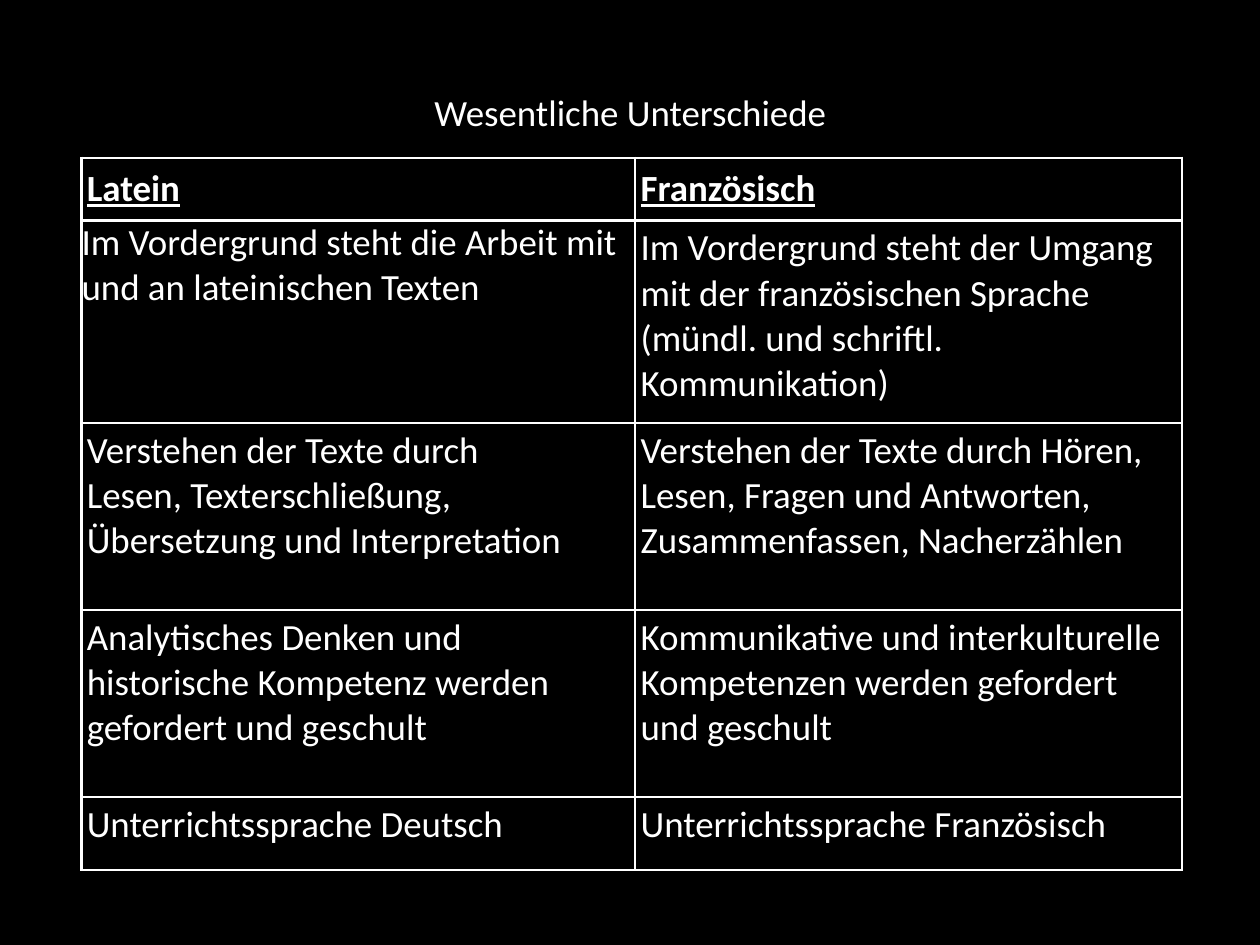
from dataclasses import dataclass

from lxml import etree
from pptx import Presentation
from pptx import util as u
from pptx.dml.color import RGBColor
from pptx.enum import text
from pptx.oxml import ns

PX = 9144  # EMU per px, 100 px to the inch


@dataclass(frozen=True)
class Theme:
    font: str = "Calibri"
    size: int = 30
    ground: str = "000000"
    ink: str = "FFFFFF"
    border: int = 2


@dataclass(frozen=True)
class Entry:
    lines: tuple[str, ...]
    heading: bool = False
    inset: int = 6


THEME = Theme()
COLUMNS = (625, 617)
ROW_HEIGHTS = (71, 229, 211, 211, 82)
ROWS = (
    (Entry(("Latein",), heading=True), Entry(("Französisch",), heading=True)),
    (
        Entry(("Im Vordergrund steht die Arbeit mit und an lateinischen Texten",), inset=0),
        Entry(("Im Vordergrund steht der Umgang mit der französischen Sprache "
               "(mündl. und schriftl. Kommunikation)",)),
    ),
    (
        Entry(("Verstehen der Texte durch", "Lesen, Texterschließung,",
               "Übersetzung und Interpretation")),
        Entry(("Verstehen der Texte durch Hören, Lesen, Fragen und Antworten, "
               "Zusammenfassen, Nacherzählen",)),
    ),
    (
        Entry(("Analytisches Denken und historische Kompetenz werden "
               "gefordert und geschult",)),
        Entry(("Kommunikative und interkulturelle Kompetenzen werden "
               "gefordert und geschult",)),
    ),
    (Entry(("Unterrichtssprache Deutsch",)), Entry(("Unterrichtssprache Französisch",))),
)


def px(length: int) -> u.Emu:
    return u.Emu(length * PX)


def write(frame, lines: tuple[str, ...], *, bold: bool = False, underline: bool = False,
          align=text.PP_ALIGN.LEFT) -> None:
    """Fill a text frame with one paragraph per line."""
    for index, line in enumerate(lines):
        para = frame.add_paragraph() if index else frame.paragraphs[0]
        para.alignment = align
        span = para.add_run()
        span.text = line
        span.font.name = THEME.font
        span.font.size = u.Pt(THEME.size)
        span.font.color.rgb = RGBColor.from_string(THEME.ink)
        span.font.bold = bold
        span.font.underline = underline


def set_insets(target, inset: int) -> None:
    target.margin_left = target.margin_right = px(inset)
    target.margin_top = target.margin_bottom = px(inset)


def add_borders(cell) -> None:
    properties = cell._tc.get_or_add_tcPr()
    for side in ("a:lnL", "a:lnR", "a:lnT", "a:lnB"):
        line = etree.SubElement(properties, ns.qn(side), w=str(u.Pt(THEME.border)))
        fill = etree.SubElement(line, ns.qn("a:solidFill"))
        etree.SubElement(fill, ns.qn("a:srgbClr"), val=THEME.ink)


def fill_cell(cell, entry: Entry) -> None:
    add_borders(cell)
    cell.fill.background()
    set_insets(cell, entry.inset)
    cell.vertical_anchor = text.MSO_ANCHOR.MIDDLE if entry.heading else text.MSO_ANCHOR.TOP
    write(cell.text_frame, entry.lines, bold=entry.heading, underline=entry.heading)


def add_comparison(page) -> None:
    table = page.shapes.add_table(
        len(ROWS), len(COLUMNS), px(92), px(178), px(sum(COLUMNS)), px(sum(ROW_HEIGHTS))
    ).table
    table.first_row = table.horz_banding = False
    for column, width in zip(table.columns, COLUMNS):
        column.width = px(width)
    for row, height, entries in zip(table.rows, ROW_HEIGHTS, ROWS):
        row.height = px(height)
        for cell, entry in zip(row.cells, entries):
            fill_cell(cell, entry)


def add_title(page) -> None:
    box = page.shapes.add_textbox(px(460), px(101), px(503), px(50))
    frame = box.text_frame
    frame.word_wrap = True
    frame.auto_size = text.MSO_AUTO_SIZE.SHAPE_TO_FIT_TEXT
    frame.vertical_anchor = text.MSO_ANCHOR.MIDDLE
    set_insets(frame, 0)
    write(frame, ("Wesentliche Unterschiede",), align=text.PP_ALIGN.CENTER)


def main() -> None:
    deck = Presentation()
    deck.slide_width, deck.slide_height = px(1422), px(1067)
    page = deck.slides.add_slide(deck.slide_layouts[6])
    page.background.fill.solid()
    page.background.fill.fore_color.rgb = RGBColor.from_string(THEME.ground)
    add_comparison(page)
    add_title(page)
    deck.save("out.pptx")


if __name__ == "__main__":
    main()
